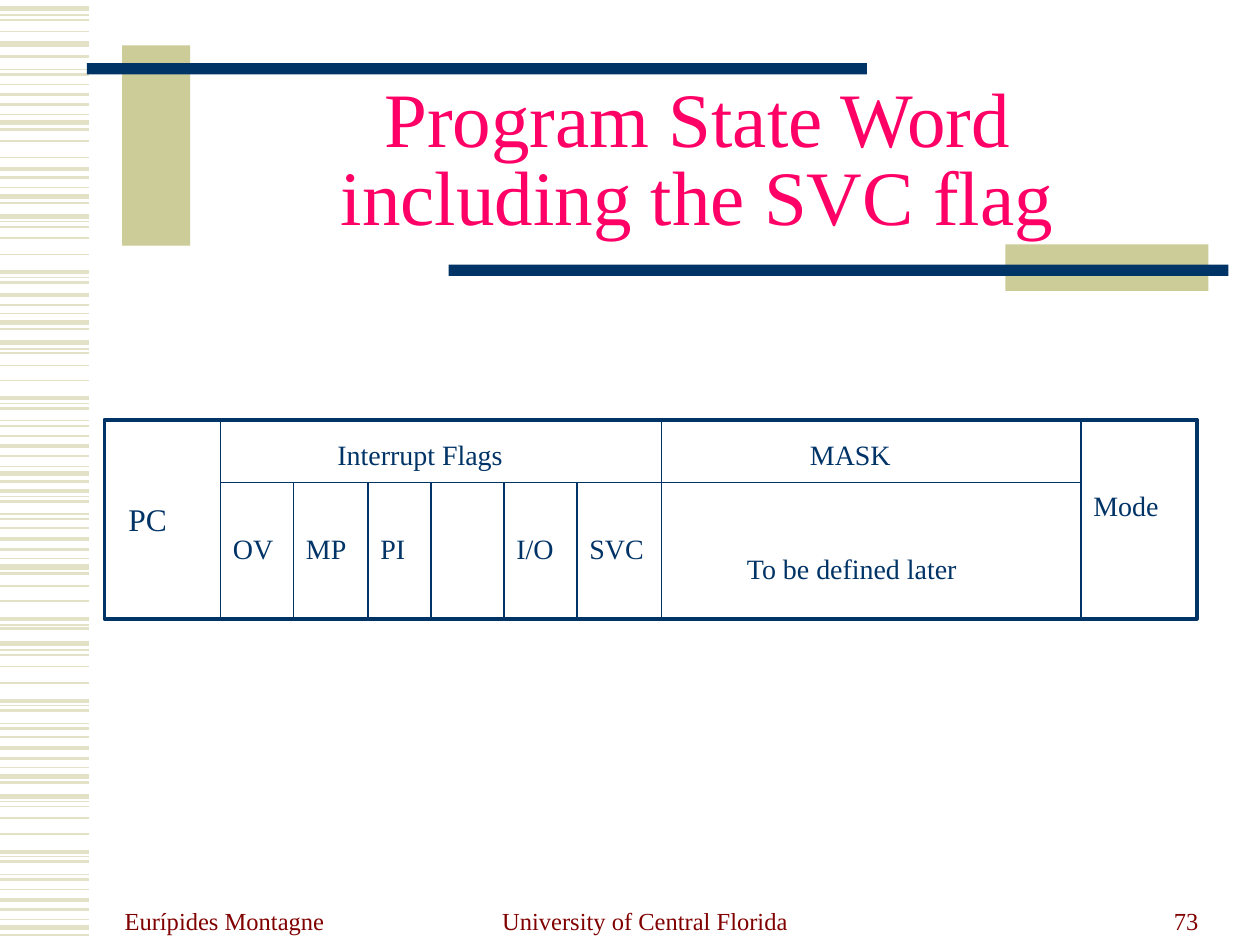
"""Build the Program State Word slide with its SVC flag diagram."""
import pptx
import pptx.dml.color
import pptx.enum.shapes
import pptx.enum.text
import pptx.oxml.ns
import pptx.util
from lxml import etree
from pptx.util import Inches

NAVY = pptx.dml.color.RGBColor(0x00, 0x33, 0x66)
KHAKI = pptx.dml.color.RGBColor(0xCC, 0xCC, 0x99)
PALE_KHAKI = pptx.dml.color.RGBColor(0xE3, 0xE2, 0xC7)
PINK = pptx.dml.color.RGBColor(0xFF, 0x00, 0x66)
MAROON = pptx.dml.color.RGBColor(0x80, 0x00, 0x00)
WHITE = pptx.dml.color.RGBColor(0xFF, 0xFF, 0xFF)
FONT = "Times New Roman"
ALIGN = pptx.enum.text.PP_ALIGN
ANCHOR = pptx.enum.text.MSO_ANCHOR
RECTANGLE = pptx.enum.shapes.MSO_SHAPE.RECTANGLE

presentation = pptx.Presentation()
presentation.slide_width = Inches(10)
presentation.slide_height = Inches(7.5)
slide = presentation.slides.add_slide(presentation.slide_layouts[5])


def draw_line(x1, y1, x2, y2, color, weight):
    line = slide.shapes.add_connector(
        pptx.enum.shapes.MSO_CONNECTOR.STRAIGHT,
        Inches(x1), Inches(y1), Inches(x2), Inches(y2))
    line.line.color.rgb = color
    line.line.width = pptx.util.Pt(weight)
    etree.SubElement(line._element.spPr, pptx.oxml.ns.qn("a:effectLst"))


def write_label(text, left, top, width, height, size, color, align, anchor):
    label = slide.shapes.add_textbox(Inches(left), Inches(top), Inches(width), Inches(height))
    frame = label.text_frame
    frame.word_wrap = True
    frame.vertical_anchor = anchor
    paragraph = frame.paragraphs[0]
    paragraph.alignment = align
    run = paragraph.add_run()
    run.text = text
    run.font.name = FONT
    run.font.size = pptx.util.Pt(size)
    run.font.color.rgb = color
    return frame


stripes = {
    3: [0.07, 0.35, 0.97, 1.56, 1.72, 2.56, 2.72, 3.76, 4.5, 5.11, 6.16, 6.32, 7.36],
    2.25: [0.75, 1.34, 2.16, 2.34, 3.16, 3.54, 3.9, 4.28, 4.91, 5.56, 5.94, 6.76, 7.14],
    1.5: [0.45, 0.59, 0.83, 1.03, 1.41, 1.61, 2.24, 2.42, 2.61, 3.24, 3.38, 3.62, 3.82,
          3.98, 4.12, 4.36, 4.55, 4.99, 5.64, 5.78, 6.02, 6.21, 6.84, 6.98, 7.22, 7.42],
    1: [0.16, 0.25, 0.67, 1.12, 1.25, 1.8, 1.89, 2.02, 2.8, 2.9, 3.02, 3.46, 4.19,
        4.65, 4.77, 5.2, 5.29, 5.42, 5.85, 6.4, 6.49, 6.62, 7.06],
    0.75: [0.12, 0.55, 0.91, 1.49, 1.76, 2.2, 2.49, 2.77, 3.2, 3.34, 3.7, 3.94, 4.08,
           4.43, 4.96, 5.16, 5.6, 5.74, 6.09, 6.36, 6.8, 6.94, 7.3],
}
for weight, heights in stripes.items():
    for y in heights:
        draw_line(0, y, 0.71, y, PALE_KHAKI, weight)

for left, top, width, height, color in [
    (0.97, 0.36, 0.54, 1.59, KHAKI),
    (0.69, 0.5, 6.19, 0.09, NAVY),
    (7.98, 1.94, 1.61, 0.37, KHAKI),
    (3.56, 2.1, 6.19, 0.09, NAVY),
]:
    bar = slide.shapes.add_shape(
        RECTANGLE, Inches(left), Inches(top), Inches(width), Inches(height))
    bar.shadow.inherit = False
    bar.fill.solid()
    bar.fill.fore_color.rgb = color
    bar.line.fill.background()

for text, left, width, align in [
    ("Eurípides Montagne", 0.89, 2.08, ALIGN.LEFT),
    ("University of Central Florida", 3.43, 3.38, ALIGN.CENTER),
    ("73", 7.21, 2.4, ALIGN.RIGHT),
]:
    write_label(text, left, 6.97, width, 0.5, 14, MAROON, align, ANCHOR.BOTTOM)

title = slide.shapes.title
title.left, title.top = Inches(1.5), Inches(0.67)
title.width, title.height = Inches(8.07), Inches(1.25)
title.text_frame.auto_size = pptx.enum.text.MSO_AUTO_SIZE.NONE
title.text_frame.vertical_anchor = ANCHOR.MIDDLE
heading = title.text_frame.paragraphs[0]
heading.alignment = ALIGN.CENTER
heading.line_spacing = 0.85
heading.font.size = pptx.util.Pt(44)
for position, text in enumerate(["Program State Word", "including the SVC flag"]):
    if position:
        heading.add_line_break()
    run = heading.add_run()
    run.text = text
    run.font.name = FONT
    run.font.size = pptx.util.Pt(44)
    run.font.color.rgb = PINK

word_top, header_bottom, word_bottom = 3.33, 3.83, 4.92
state_word = slide.shapes.add_shape(
    RECTANGLE, Inches(0.83), Inches(word_top), Inches(8.67), Inches(1.58))
state_word.shadow.inherit = False
state_word.fill.solid()
state_word.fill.fore_color.rgb = WHITE
state_word.line.color.rgb = NAVY
state_word.line.width = pptx.util.Pt(2.25)

draw_line(1.75, header_bottom, 8.58, header_bottom, NAVY, 0.75)
for x in [1.75, 5.25, 8.58]:
    draw_line(x, word_top, x, word_bottom, NAVY, 0.75)
for x in [2.33, 2.92, 3.42, 4, 4.58]:
    draw_line(x, header_bottom, x, word_bottom, NAVY, 0.75)

fields = [
    ("PC", 0.92, 3.92, 0.67, 0.4, 18),
    ("Interrupt Flags", 2.58, 3.42, 1.92, 0.37, 16),
    ("MASK", 6.33, 3.42, 1.08, 0.37, 16),
    ("Mode", 8.58, 3.83, 1, 0.37, 16),
    ("To be defined later", 5.83, 4.33, 2.33, 0.37, 16),
]
for flag, left in [("OV", 1.75), ("MP", 2.33), ("PI", 2.92), ("I/O", 4), ("SVC", 4.58)]:
    fields.append((flag, left, 4.17, 0.75, 0.37, 16))
for text, left, top, width, height, size in fields:
    frame = write_label(text, left, top, width, height, size, NAVY, ALIGN.LEFT, ANCHOR.TOP)
    frame.auto_size = pptx.enum.text.MSO_AUTO_SIZE.SHAPE_TO_FIT_TEXT

presentation.save("out.pptx")
